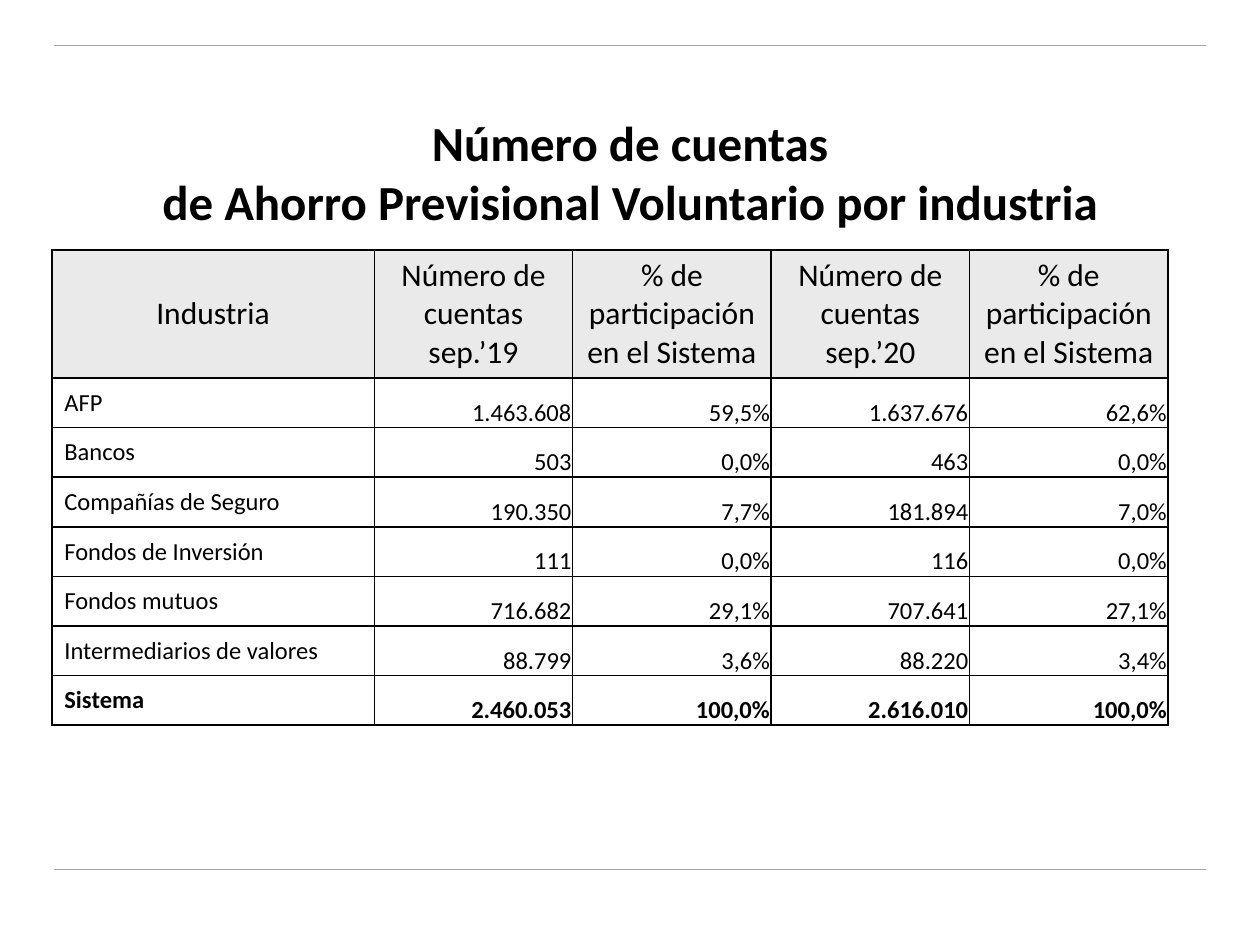
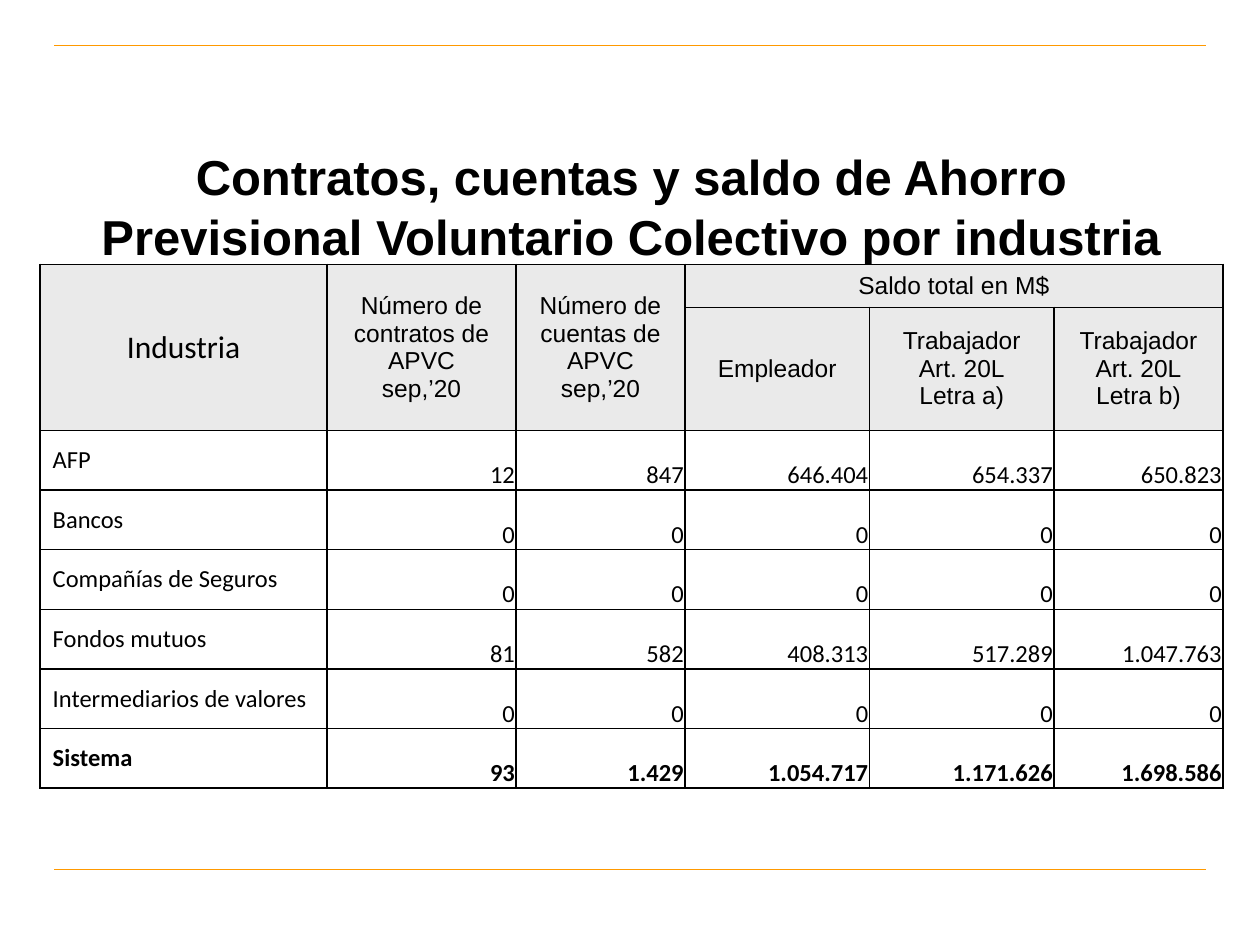
from dataclasses import dataclass

from lxml.etree import SubElement
from pptx import Presentation
from pptx.dml.color import RGBColor
from pptx.enum.shapes import MSO_CONNECTOR
from pptx.enum.text import MSO_ANCHOR, PP_ALIGN
from pptx.oxml.ns import qn
from pptx.util import Pt


@dataclass(frozen=True)
class Theme:
    ink: str = "000000"
    rule: str = "FF9900"
    header: str = "EAEAEA"
    paper: str = "FFFFFF"
    sans: str = "Arial"
    body: str = "Calibri"
    title_size: float = 28
    title_leading: float = 34
    header_size: float = 18
    text_size: float = 14
    rule_width: float = 0.75
    border_width: float = 1


THEME = Theme()
PAGE_WIDTH, PAGE_HEIGHT = 720, 540
RULE_LEFT, RULE_RIGHT, RULE_TOPS = 31, 689, (26, 497)
LABEL_INSETS = (7.2, 3.6, 7.2, 3.6)
NUMBER_INSETS = (0.7, 0.7, 0.7, 0)

ACCOUNT_ROWS = [
    ("AFP", "1.463.608", "59,5%", "1.637.676", "62,6%"),
    ("Bancos", "503", "0,0%", "463", "0,0%"),
    ("Compañías de Seguro", "190.350", "7,7%", "181.894", "7,0%"),
    ("Fondos de Inversión", "111", "0,0%", "116", "0,0%"),
    ("Fondos mutuos", "716.682", "29,1%", "707.641", "27,1%"),
    ("Intermediarios de valores", "88.799", "3,6%", "88.220", "3,4%"),
    ("Sistema", "2.460.053", "100,0%", "2.616.010", "100,0%"),
]
COLLECTIVE_ROWS = [
    ("AFP", "12", "847", "646.404", "654.337", "650.823"),
    ("Bancos", *["0"] * 5),
    ("Compañías de Seguros", *["0"] * 5),
    ("Fondos mutuos", "81", "582", "408.313", "517.289", "1.047.763"),
    ("Intermediarios de valores", *["0"] * 5),
    ("Sistema", "93", "1.429", "1.054.717", "1.171.626", "1.698.586"),
]


def add_span(para, text, font, size, bold=False):
    span = para.add_run()
    span.text = text
    span.font.name = font
    span.font.size = Pt(size)
    span.font.bold = bold
    span.font.color.rgb = RGBColor.from_string(THEME.ink)


def add_rules(page):
    for top in RULE_TOPS:
        rule = page.shapes.add_connector(
            MSO_CONNECTOR.STRAIGHT, Pt(RULE_LEFT), Pt(top), Pt(RULE_RIGHT), Pt(top))
        rule.line.color.rgb = RGBColor.from_string(THEME.rule)
        rule.line.width = Pt(THEME.rule_width)
        SubElement(rule.element.spPr, qn("a:effectLst"))


def set_title(page, box, lines, font, bottom_inset):
    title = page.shapes.title
    title.left, title.top, title.width, title.height = map(Pt, box)
    frame = title.text_frame
    frame.word_wrap = True
    frame.vertical_anchor = MSO_ANCHOR.BOTTOM
    frame.margin_bottom = Pt(bottom_inset)
    para = frame.paragraphs[0]
    para.alignment = PP_ALIGN.CENTER
    para.line_spacing = Pt(THEME.title_leading)
    for index, line in enumerate(lines):
        if index:
            para.add_line_break()
        add_span(para, line, font, THEME.title_size, bold=True)


def add_page(deck, title_box, title_lines, title_font, bottom_inset):
    page = deck.slides.add_slide(deck.slide_layouts[5])
    add_rules(page)
    set_title(page, title_box, title_lines, title_font, bottom_inset)
    return page


def style_cell(cell, fill):
    """Set the fill, thin borders and tight insets every cell starts from."""
    set_insets(cell, NUMBER_INSETS)
    properties = cell._tc.get_or_add_tcPr()
    for side in ("a:lnL", "a:lnR", "a:lnT", "a:lnB"):
        border = SubElement(properties, qn(side), w=str(Pt(THEME.border_width)))
        SubElement(SubElement(border, qn("a:solidFill")), qn("a:srgbClr"), val=THEME.ink)
    cell.fill.solid()
    cell.fill.fore_color.rgb = RGBColor.from_string(fill)


def set_insets(cell, insets):
    (cell.margin_left, cell.margin_top,
     cell.margin_right, cell.margin_bottom) = map(Pt, insets)


def fill_header(cell, lines, font, size):
    set_insets(cell, LABEL_INSETS)
    cell.vertical_anchor = MSO_ANCHOR.MIDDLE
    frame = cell.text_frame
    for index, line in enumerate(lines):
        para = frame.add_paragraph() if index else frame.paragraphs[0]
        para.alignment = PP_ALIGN.CENTER
        add_span(para, line, font, size)


def fill_industry(cell, text, bold):
    set_insets(cell, LABEL_INSETS)
    cell.vertical_anchor = MSO_ANCHOR.MIDDLE
    add_span(cell.text_frame.paragraphs[0], text, THEME.body, THEME.text_size, bold)


def fill_number(cell, text, bold):
    cell.vertical_anchor = MSO_ANCHOR.BOTTOM
    para = cell.text_frame.paragraphs[0]
    para.alignment = PP_ALIGN.RIGHT
    add_span(para, text, THEME.body, THEME.text_size, bold)


def add_industry_table(page, left, top, widths, header_heights, row_height, rows):
    """Build the grid with its figures, totals in bold, and return the table."""
    heights = header_heights + [row_height] * len(rows)
    table = page.shapes.add_table(
        len(heights), len(widths), Pt(left), Pt(top),
        Pt(sum(widths)), Pt(sum(heights))).table
    table.first_row = table.horz_banding = False
    for column, width in zip(table.columns, widths):
        column.width = Pt(width)
    header_count = len(header_heights)
    for index, (row, height) in enumerate(zip(table.rows, heights)):
        row.height = Pt(height)
        for cell in row.cells:
            style_cell(cell, THEME.header if index < header_count else THEME.paper)
    for index, (industry, *numbers) in enumerate(rows, header_count):
        bold = index == len(heights) - 1
        fill_industry(table.cell(index, 0), industry, bold)
        for column, number in enumerate(numbers, 1):
            fill_number(table.cell(index, column), number, bold)
    return table


def add_accounts_page(deck):
    page = add_page(
        deck, (36, 71.3, 648, 73.4),
        ["Número de cuentas", "de Ahorro Previsional Voluntario por industria"],
        THEME.body, 13)
    table = add_industry_table(
        page, 29.6, 142.8, [184.3] + [113.4] * 4, [73.2], 28.35, ACCOUNT_ROWS)
    headers = [["Industria"]]
    for year in ("19", "20"):
        headers += [["Número de cuentas", f"sep.’{year}"],
                    ["% de participación en el Sistema"]]
    for column, lines in enumerate(headers):
        fill_header(table.cell(0, column), lines, THEME.body, THEME.header_size)


def add_collective_page(deck):
    page = add_page(
        deck, (36.7, 83.5, 648, 90),
        ["Contratos, cuentas y saldo de Ahorro Previsional Voluntario Colectivo por industria"],
        THEME.sans, 22)
    table = add_industry_table(
        page, 22.9, 151, [164, 108, 96.5, 105.5, 105.5, 96.5],
        [24.6, 70.4], 34.1, COLLECTIVE_ROWS)
    for column in range(3):
        table.cell(0, column).merge(table.cell(1, column))
    table.cell(0, 3).merge(table.cell(0, 5))
    fill_header(table.cell(0, 0), ["Industria"], THEME.body, THEME.header_size)
    headers = {
        (0, 1): ["Número de contratos de APVC", "sep,’20"],
        (0, 2): ["Número de cuentas de APVC", "sep,’20"],
        (0, 3): ["Saldo total en M$"],
        (1, 3): ["Empleador"],
        (1, 4): ["Trabajador", "Art. 20L", "Letra a)"],
        (1, 5): ["Trabajador", "Art. 20L", "Letra b)"],
    }
    for position, lines in headers.items():
        fill_header(table.cell(*position), lines, THEME.sans, THEME.text_size)


def main():
    deck = Presentation()
    deck.slide_width, deck.slide_height = Pt(PAGE_WIDTH), Pt(PAGE_HEIGHT)
    add_accounts_page(deck)
    add_collective_page(deck)
    deck.save("out.pptx")


if __name__ == "__main__":
    main()
